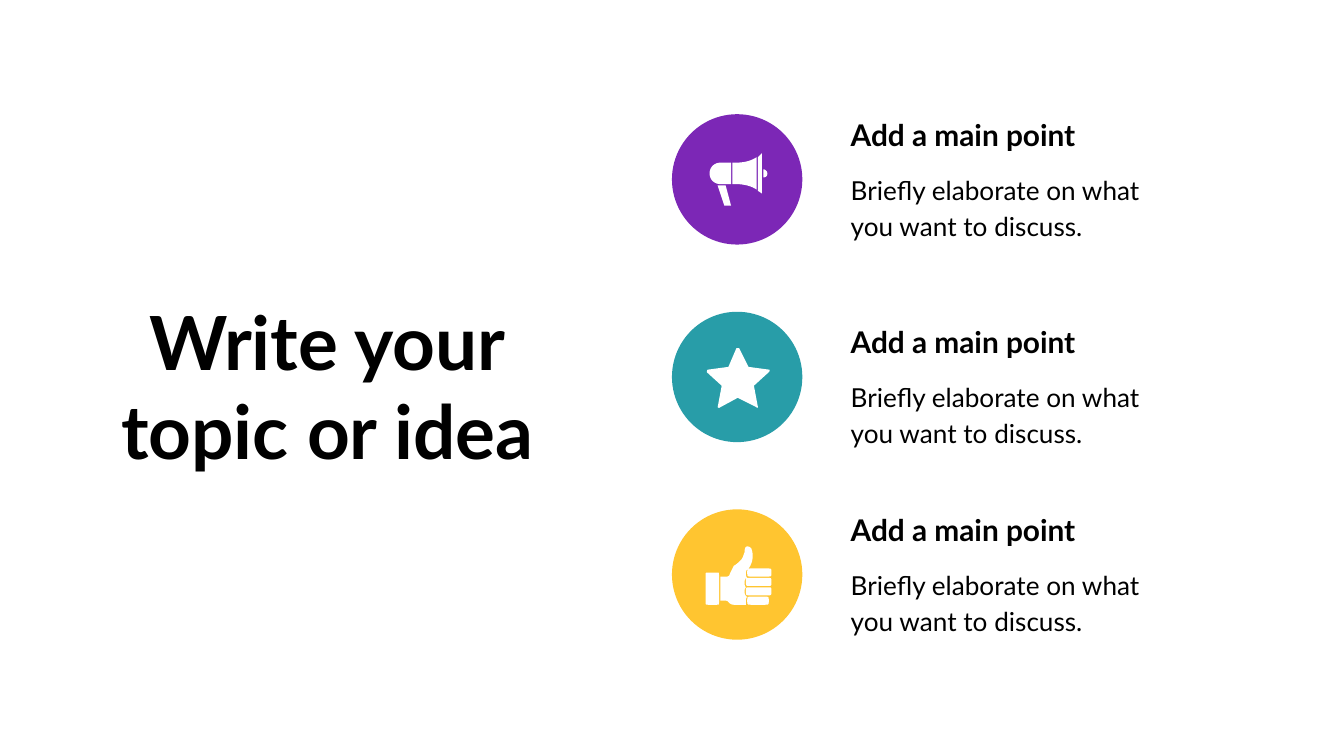
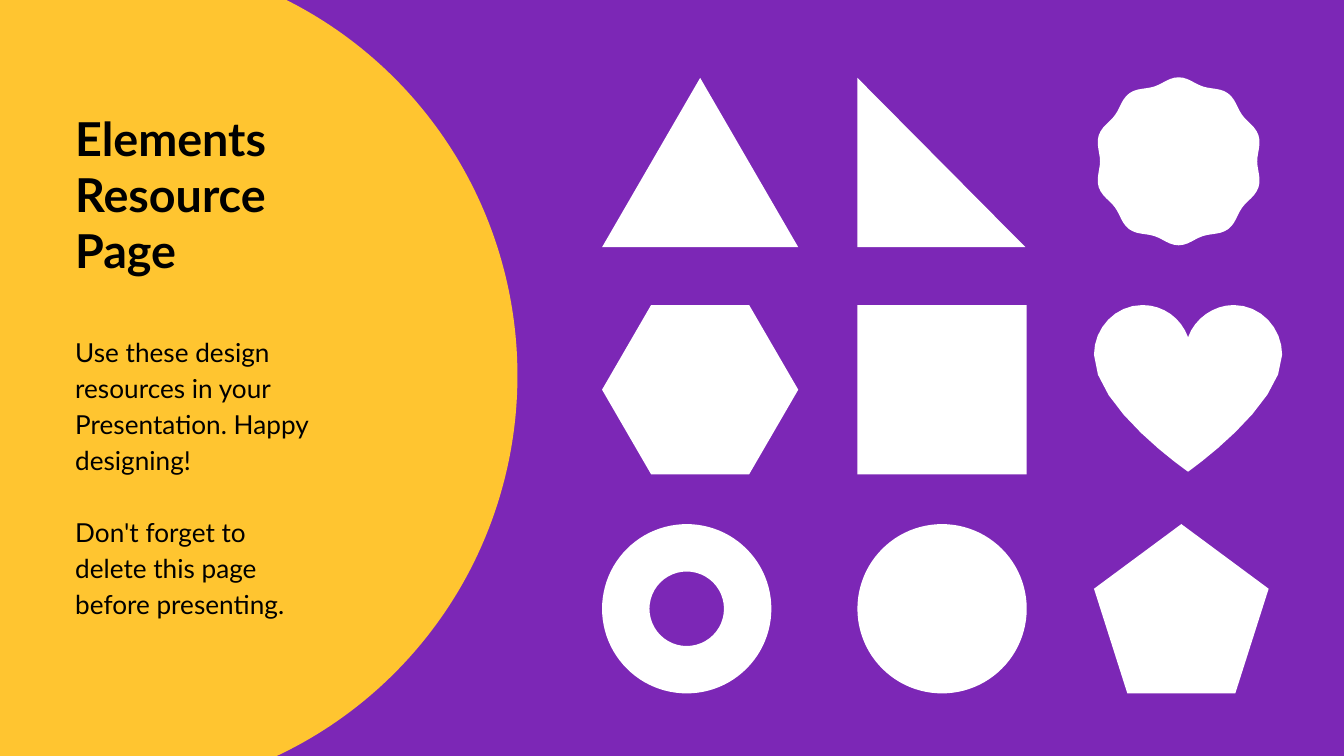
import math
import pptx
import pptx.dml.color
import pptx.enum.shapes
import pptx.enum.text
import pptx.util

SHAPE = pptx.enum.shapes.MSO_SHAPE
ALIGN = pptx.enum.text.PP_ALIGN
WIDTH, HEIGHT = 10, 5.625
FONT = "Lato"
PURPLE, TEAL, YELLOW, WHITE, BLACK = "7C27B6", "289DA8", "FFC530", "FFFFFF", "000000"
HERO = {"size": 40, "bold": True}
HEADING = {"size": 25, "bold": True}
SUBHEAD = {"size": 16, "bold": True}
BODY = {"size": 14, "bold": False}

TOPIC = ["Write your", "topic or idea"]
POINT = "Add a main point"
DETAIL = ["Briefly elaborate on what", "you want to discuss."]
RESOURCE_TITLE = ["Elements", "Resource", "Page"]
RESOURCE_NOTES = [
    "Use these design resources in your Presentation. Happy designing!",
    "Don't forget to delete this page before presenting.",
]


def pill(x, y, w, h, r):
    """Return the outline of a rounded rectangle."""
    x2, y2 = x + w, y + h
    return [(x + r, y), (x2 - r, y), (x2, y, x2, y, x2, y + r), (x2, y2 - r),
            (x2, y2, x2, y2, x2 - r, y2), (x + r, y2), (x, y2, x, y2, x, y2 - r),
            (x, y + r), (x, y, x, y, x + r, y)]


def badge(cx, cy, radius, wave, lobes):
    """Return the outline of a disc with a wavy rim."""
    points = []
    for deg in range(0, 360, 3):
        a = math.radians(deg)
        r = radius + wave * math.cos(lobes * a)
        points.append((cx + r * math.sin(a), cy - r * math.cos(a)))
    return points


MEGAPHONE = [
    [(34, 53), (40, 53), (44, 68), (39, 68)],
    [(44, 52), (44, 36), (36, 36), (32, 36, 28, 39, 28, 44), (28, 49, 32, 52, 36, 52)],
    [(45, 36), (48, 36), (55, 36, 60, 34, 63, 32), (63, 56), (60, 54, 55, 52, 48, 52), (45, 52)],
    [(64, 32), (67, 29), (67, 59), (64, 57)],
    [(68, 41), (70, 41, 71, 43, 71, 44), (71, 46, 70, 47, 68, 47)],
]
STAR = [[
    (50, 27), (57, 41), (72, 43), (73, 43, 73, 44, 72, 45), (61, 55), (64, 71),
    (64, 71, 63, 72, 63, 71), (49, 64), (36, 71), (35, 72, 34, 71, 34, 71), (37, 55),
    (26, 45), (26, 44, 26, 43, 27, 43), (42, 41), (48, 27), (49, 27, 50, 27, 50, 27),
]]
PALM = [
    (55, 68), (55, 67, 55, 66, 56, 65), (55, 65, 54, 63, 54, 62), (54, 61),
    (54, 60, 54, 59, 55, 58), (54, 57, 54, 56, 54, 55), (54, 54), (54, 52, 55, 51, 56, 51),
    (55, 50, 55, 49, 55, 48), (55, 47), (55, 46, 56, 44, 57, 44), (60, 40, 61, 34, 59, 29),
    (58, 28, 56, 27, 55, 28), (54, 29, 54, 31, 54, 32), (53, 34, 53, 36, 51, 38),
    (50, 39, 48, 41, 46, 42), (45, 44, 44, 46, 43, 48), (43, 49, 42, 50, 41, 50),
    (36, 50), (36, 68), (40, 68), (41, 68, 41, 68, 42, 69), (43, 70, 44, 71, 46, 71), (55, 71),
]
FINGERS = [(56, 44, 18), (55, 51, 19), (55, 58, 19), (56, 65, 16)]
THUMB = [PALM, pill(25, 47, 10, 24, 2)] + [pill(*f, 6, 3) for f in FINGERS]
HEART = [[
    (0, 37), (0, 76, 70, 124, 70, 124), (70, 124, 140, 75, 140, 37), (140, 17, 124, 0, 104, 0),
    (89, 0, 75, 10, 70, 24), (65, 10, 52, 0, 36, 0), (16, 0, 0, 17, 0, 37),
]]
BADGE = [badge(63, 62, 60.5, 2, 10)]

DISC, DISC_LEFT, DISC_TOP, DISC_STEP = 0.97, 5, 0.85, 1.47
POINTS = [(PURPLE, MEGAPHONE, 0.83), (TEAL, STAR, 2.37), (YELLOW, THUMB, 3.77)]
COLUMNS, ROWS = (4.48, 6.38, 8.14), (0.58, 2.27, 3.9)
ELEMENTS = [
    [(SHAPE.ISOSCELES_TRIANGLE, 1.46, None), (SHAPE.RIGHT_TRIANGLE, 1.25, None), BADGE],
    [(SHAPE.HEXAGON, 1.46, 0.29), (SHAPE.RECTANGLE, 1.26, None), HEART],
    [(SHAPE.DONUT, 1.26, 0.28), (SHAPE.OVAL, 1.26, None), (SHAPE.REGULAR_PENTAGON, 1.3, None)],
]


def color(code):
    """Turn a hex string into a colour."""
    return pptx.dml.color.RGBColor.from_string(code)


def paint(sp, fill):
    """Give a shape a plain fill without line or shadow."""
    sp.shadow.inherit = False
    sp.fill.solid()
    sp.fill.fore_color.rgb = color(fill)
    sp.line.fill.background()


def preset(sl, kind, box, fill, adjust=None):
    """Add a preset shape."""
    sp = sl.shapes.add_shape(kind, *map(pptx.util.Inches, box))
    if adjust is not None:
        sp.adjustments[0] = adjust
    paint(sp, fill)


def flatten(outline, steps=8):
    """Turn lines and cubic curves into a list of points."""
    points = [outline[0]]
    for seg in outline[1:]:
        if len(seg) == 2:
            points.append(seg)
            continue
        start, knots = points[-1], (seg[:2], seg[2:4], seg[4:])
        for t in (i / steps for i in range(1, steps + 1)):
            u = 1 - t
            weights = (u ** 3, 3 * u * u * t, 3 * u * t * t, t ** 3)
            points.append(tuple(sum(w * k[axis] for w, k in zip(weights, (start, *knots)))
                                for axis in (0, 1)))
    return points


def outline_shape(sl, outlines, left, top, fill):
    """Draw outlines given in hundredths of an inch from a corner."""
    builder = None
    for outline in outlines:
        points = [(round(pptx.util.Inches(left + x / 100)), round(pptx.util.Inches(top + y / 100)))
                  for x, y in flatten(outline)]
        if builder is None:
            builder = sl.shapes.build_freeform(*points[0], scale=1.0)
        else:
            builder.move_to(*points[0])
        builder.add_line_segments(points[1:], close=True)
    paint(builder.convert_to_shape(), fill)


def text(sl, box, lines, style, align=ALIGN.LEFT, spacing=None, gap=0):
    """Add a text box with one paragraph a line."""
    tf = sl.shapes.add_textbox(*map(pptx.util.Inches, box)).text_frame
    frame = {"word_wrap": True, "auto_size": pptx.enum.text.MSO_AUTO_SIZE.SHAPE_TO_FIT_TEXT,
             "margin_left": 0, "margin_right": 0, "margin_top": 0, "margin_bottom": 0}
    for name, value in frame.items():
        setattr(tf, name, value)
    for i, line in enumerate(lines):
        p = tf.add_paragraph() if i else tf.paragraphs[0]
        p.alignment = align
        if spacing:
            p.line_spacing = spacing
        if i and gap:
            p.space_before = pptx.util.Pt(gap)
        r = p.add_run()
        r.text = line
        font = {"name": FONT, "bold": style["bold"], "size": pptx.util.Pt(style["size"])}
        for name, value in font.items():
            setattr(r.font, name, value)
        r.font.color.rgb = color(BLACK)


def add_slide(prs, background):
    """Add a blank slide with a plain background."""
    sl = prs.slides.add_slide(prs.slide_layouts[6])
    sl.background.fill.solid()
    sl.background.fill.fore_color.rgb = color(background)
    return sl


def topic_slide(prs):
    """Build the topic with its three main points."""
    sl = add_slide(prs, WHITE)
    text(sl, (0.56, 2.2, 3.75, 1.35), TOPIC, HERO, ALIGN.CENTER)
    for i, (fill, icon, top) in enumerate(POINTS):
        disc_top = DISC_TOP + i * DISC_STEP
        preset(sl, SHAPE.OVAL, (DISC_LEFT, disc_top, DISC, DISC), fill)
        outline_shape(sl, icon, DISC_LEFT, disc_top, WHITE)
        text(sl, (6.33, top, 3.11, 0.27), [POINT], SUBHEAD, spacing=1.15)
        text(sl, (6.33, top + 0.43, 3.11, 0.51), DETAIL, BODY, spacing=1.15)


def resource_slide(prs):
    """Build the page of design elements."""
    sl = add_slide(prs, PURPLE)
    preset(sl, SHAPE.OVAL, (-2.37, -0.33, 6.22, 6.25), YELLOW)
    text(sl, (0.56, 0.82, 1.83, 1.26), RESOURCE_TITLE, HEADING)
    text(sl, (0.56, 2.47, 1.83, 2.13), RESOURCE_NOTES, BODY, spacing=1.15, gap=19.3)
    for top, row in zip(ROWS, ELEMENTS):
        for left, element in zip(COLUMNS, row):
            if isinstance(element, list):
                outline_shape(sl, element, left, top, WHITE)
            else:
                kind, width, adjust = element
                preset(sl, kind, (left, top, width, 1.26), WHITE, adjust)


def main():
    """Build and save the presentation."""
    prs = pptx.Presentation()
    prs.slide_width = pptx.util.Inches(WIDTH)
    prs.slide_height = pptx.util.Inches(HEIGHT)
    topic_slide(prs)
    resource_slide(prs)
    prs.save("out.pptx")


if __name__ == "__main__":
    main()
